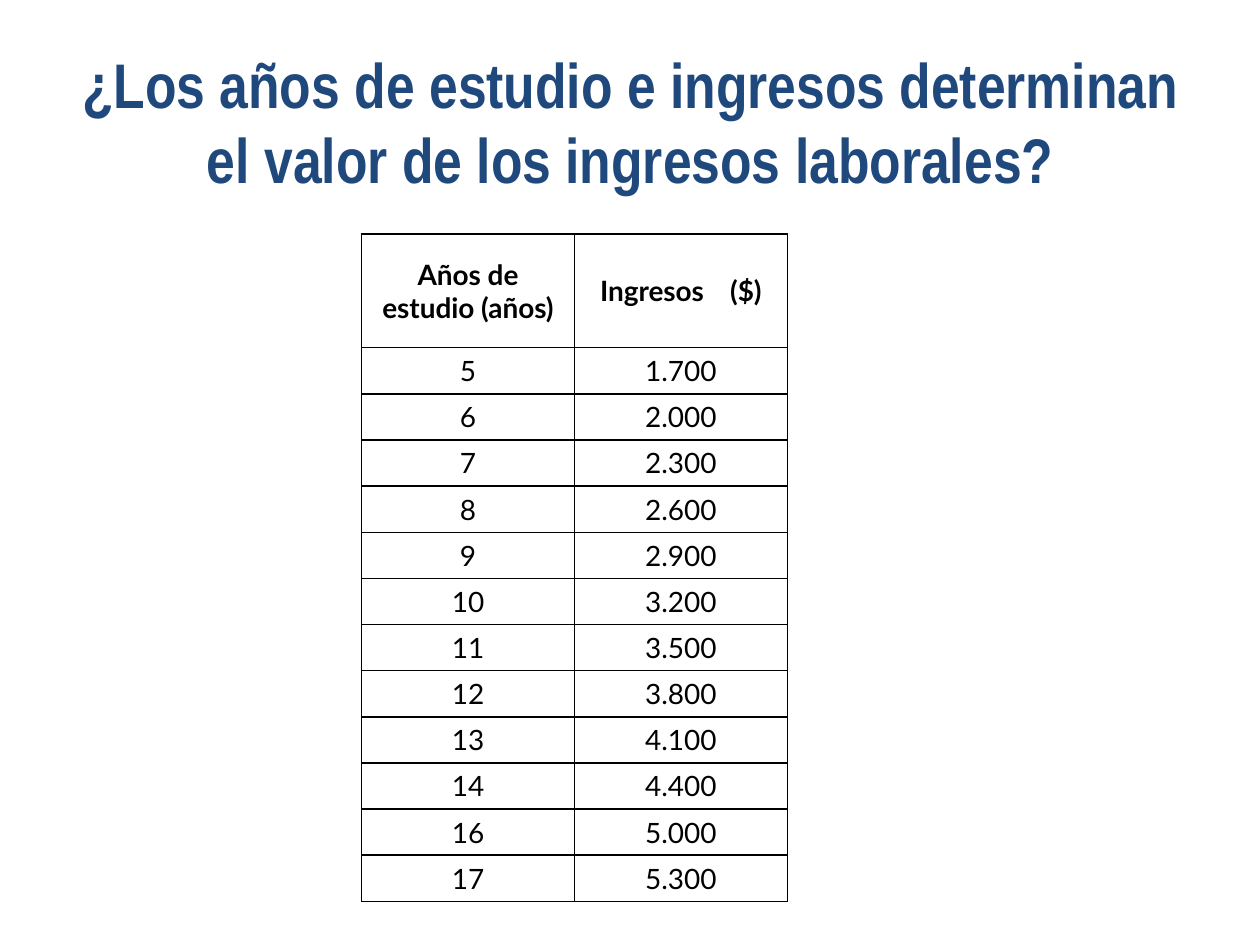
from dataclasses import dataclass

from lxml.etree import SubElement
from pptx import Presentation
from pptx.dml.color import RGBColor
from pptx.enum.text import MSO_ANCHOR as Anchor, PP_ALIGN as Align
from pptx.oxml.ns import qn
from pptx.util import Cm, Pt

COLORS = {"title": "1F497D", "text": "000000", "border": "000000"}
HEADER_HEIGHT, ROW_HEIGHT, COL_WIDTH = Cm(2.29), Cm(0.93), Cm(4.29)
GAP_SPACING = 1100  # hundredths of a point after the space before "($)"


@dataclass
class Income:
    years: int
    amount: str


INCOMES = [
    Income(5, "1.700"), Income(6, "2.000"), Income(7, "2.300"),
    Income(8, "2.600"), Income(9, "2.900"), Income(10, "3.200"),
    Income(11, "3.500"), Income(12, "3.800"), Income(13, "4.100"),
    Income(14, "4.400"), Income(16, "5.000"), Income(17, "5.300"),
]


def style_paragraph(p, font: str, size: int, color: str, bold: bool) -> None:
    p.alignment = Align.CENTER
    p.font.name, p.font.size, p.font.bold = font, Pt(size), bold
    p.font.color.rgb = RGBColor.from_string(COLORS[color])


def add_borders(cell) -> None:
    """Draw a 1 pt line on every side of the cell."""
    tc_pr = cell._tc.get_or_add_tcPr()
    for i, side in enumerate(("a:lnL", "a:lnR", "a:lnT", "a:lnB")):
        ln = tc_pr.makeelement(qn(side), {"w": str(Pt(1))})
        fill = SubElement(ln, qn("a:solidFill"))
        SubElement(fill, qn("a:srgbClr"), val=COLORS["border"])
        tc_pr.insert(i, ln)


def fill_cell(cell, runs: list[str], header: bool) -> None:
    cell.fill.background()
    cell.vertical_anchor = Anchor.MIDDLE if header else Anchor.BOTTOM
    p = cell.text_frame.paragraphs[0]
    style_paragraph(p, "Lato", 16, "text", header)
    for text in runs:
        r = p.add_run()
        r.text = text
        if text == " ":
            r.font._element.set("spc", str(GAP_SPACING))
    add_borders(cell)


def add_income_table(slide, incomes: list[Income]) -> None:
    rows = [(["Años de estudio (años)"], ["Ingresos", " ", "($)"])]
    rows += [([str(n.years)], [n.amount]) for n in incomes]
    height = HEADER_HEIGHT + ROW_HEIGHT * len(incomes)
    table = slide.shapes.add_table(
        len(rows), 2, Cm(7.29), Cm(4.72), COL_WIDTH * 2, height).table
    table.first_row = table.horz_banding = False
    for col in table.columns:
        col.width = COL_WIDTH
    for i, row in enumerate(rows):
        table.rows[i].height = ROW_HEIGHT if i else HEADER_HEIGHT
        for j, runs in enumerate(row):
            fill_cell(table.cell(i, j), runs, header=i == 0)


def main() -> None:
    prs = Presentation()
    prs.slide_width, prs.slide_height = Cm(25.4), Cm(19.05)
    s = prs.slides.add_slide(prs.slide_layouts[5])

    # Title
    title = s.shapes.title
    title.left, title.top = Cm(1.09), Cm(0.91)
    title.width, title.height = Cm(23.24), Cm(3.18)
    tf = title.text_frame
    tf.word_wrap = True
    tf.vertical_anchor = Anchor.BOTTOM
    tf.text = ("¿Los años de estudio e ingresos determinan "
               "el valor de los ingresos laborales?")
    style_paragraph(tf.paragraphs[0], "Arial Narrow", 36, "title", True)

    # Years of study against income
    add_income_table(s, INCOMES)

    prs.save("out.pptx")


if __name__ == "__main__":
    main()
